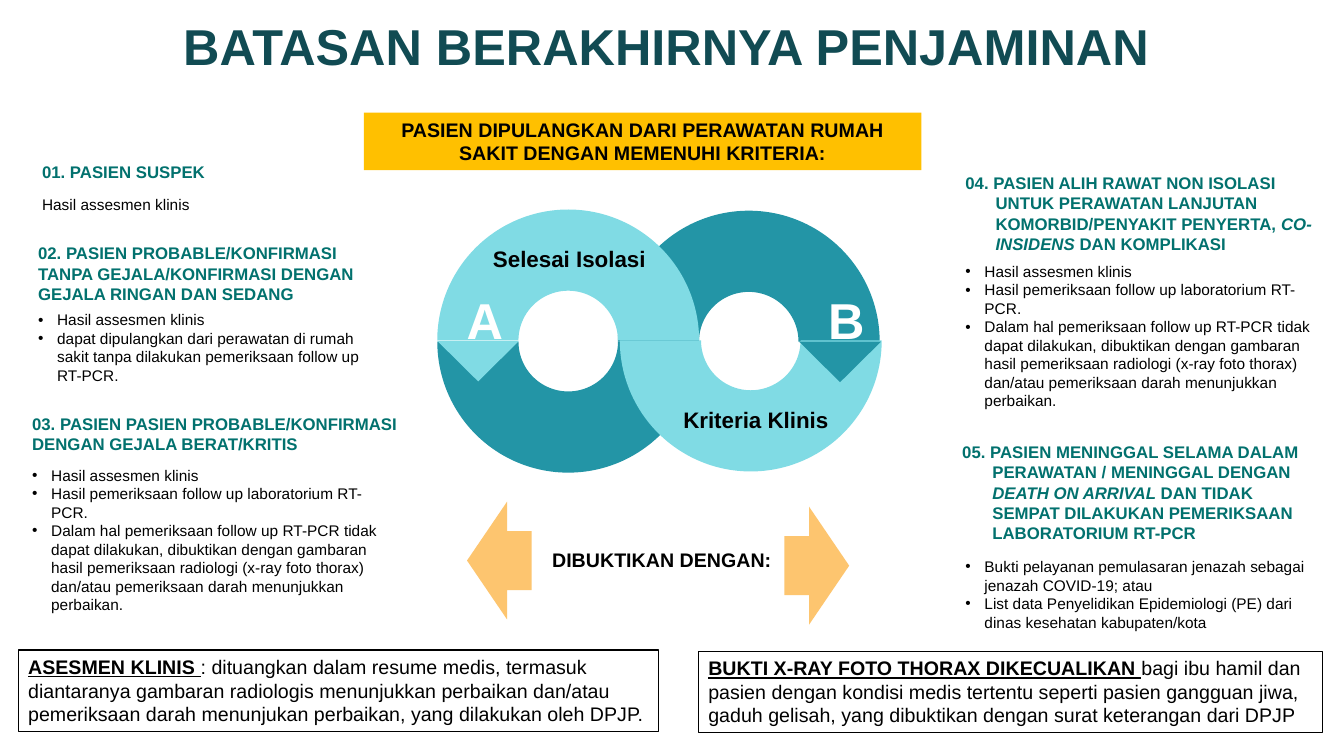
from dataclasses import dataclass
from typing import Optional

import lxml.etree
import pptx
import pptx.dml.color
import pptx.enum.shapes
import pptx.enum.text
import pptx.oxml.ns
import pptx.util

Cm = pptx.util.Cm
Pt = pptx.util.Pt
RGBColor = pptx.dml.color.RGBColor
Kind = pptx.enum.shapes.MSO_SHAPE
Align = pptx.enum.text.PP_ALIGN
Anchor = pptx.enum.text.MSO_ANCHOR
qn = pptx.oxml.ns.qn

NAVY = RGBColor(0x11, 0x4B, 0x53)
GREEN = RGBColor(0x02, 0x71, 0x6E)
TEAL = RGBColor(0x23, 0x95, 0xA6)
AQUA = RGBColor(0x80, 0xDB, 0xE4)
AMBER = RGBColor(0xFF, 0xC0, 0x00)
PEACH = RGBColor(0xFD, 0xC5, 0x6F)
BLACK = RGBColor(0, 0, 0)
WHITE = RGBColor(0xFF, 0xFF, 0xFF)

FONT = "Arial"
HANG = 0.76
DOT = 0.48


@dataclass
class Style:
    size: int
    color: RGBColor = BLACK
    bold: bool = False
    center: bool = False
    middle: bool = False
    bullet: bool = False
    line: bool = False  # marked words are bold and underlined, else italic
    space: Optional[float] = None


@dataclass
class Note:
    """Text in a box; words between asterisks are marked."""
    at: tuple[float, float, float, float]
    style: Style
    lines: tuple[str, ...]
    hang: float = 0
    fill: Optional[RGBColor] = None
    edge: Optional[RGBColor] = None


@dataclass
class Form:
    kind: Kind
    at: tuple[float, float, float, float]
    fill: RGBColor
    turn: int = 0
    adjust: tuple[float, ...] = ()


TITLE = Style(36, NAVY, bold=True, center=True, middle=True, space=0.9)
HEAD = Style(12, GREEN, bold=True, middle=True)
PLAIN = Style(11)
LIST = Style(11, bullet=True)
LETTER = Style(36, WHITE, bold=True, center=True, middle=True)
LABEL = Style(16, bold=True, center=True)
BANNER = Style(14, bold=True, center=True)
FRAME = Style(14, line=True)

ARC = (108, 0, 0.31)
ARROW = (0.5, 0.62)
SIDE = 6.6

RINGS = [
    Form(Kind.BLOCK_ARC, (15.57, 5.31, SIDE, SIDE), TEAL, 0, ARC),
    Form(Kind.BLOCK_ARC, (11.02, 5.31, SIDE, SIDE), TEAL, 180, ARC),
    Form(Kind.BLOCK_ARC, (15.62, 5.28, SIDE, SIDE), AQUA, 180, ARC),
    Form(Kind.BLOCK_ARC, (11.02, 5.28, SIDE, SIDE), AQUA, 0, ARC),
    Form(Kind.ISOSCELES_TRIANGLE, (11.02, 8.59, 2.06, 1.02), AQUA, 180),
    Form(Kind.ISOSCELES_TRIANGLE, (20.14, 8.61, 2.06, 1.02), TEAL, 180),
]
ARROWS = [
    Form(Kind.UP_ARROW, (11.1, 13.31, 2.97, 1.63), PEACH, 270, ARROW),
    Form(Kind.UP_ARROW, (19.1, 13.44, 2.97, 1.63), PEACH, 90, ARROW),
]

CHECKS = (
    "Hasil assesmen klinis",
    "Hasil pemeriksaan follow up laboratorium RT-PCR.",
    "Dalam hal pemeriksaan follow up RT-PCR tidak dapat dilakukan, dibuktikan "
    "dengan gambaran hasil pemeriksaan radiologi (x-ray foto thorax) dan/atau "
    "pemeriksaan darah menunjukkan perbaikan.",
)

NOTES = [
    Note((0.71, 0.23, 32.16, 2.01), TITLE, ("BATASAN BERAKHIRNYA PENJAMINAN",)),
    Note((9.17, 2.84, 14.05, 1.45), BANNER,
         ("PASIEN DIPULANGKAN DARI PERAWATAN RUMAH SAKIT DENGAN MEMENUHI KRITERIA:",),
         fill=AMBER),
    Note((0.81, 3.96, 9.53, 0.76), HEAD, ("01. PASIEN SUSPEK",), HANG),
    Note((0.81, 4.78, 9.53, 0.74), PLAIN, CHECKS[:1]),
    Note((0.71, 5.99, 9.53, 1.8), HEAD,
         ("02. PASIEN PROBABLE/KONFIRMASI TANPA GEJALA/KONFIRMASI DENGAN "
          "GEJALA RINGAN DAN SEDANG",)),
    Note((0.71, 7.7, 9.04, 2.13), LIST,
         (CHECKS[0], "dapat dipulangkan dari perawatan di rumah sakit tanpa "
          "dilakukan pemeriksaan follow up RT-PCR."), DOT),
    Note((0.56, 10.29, 10.59, 1.27), HEAD,
         ("03. PASIEN PASIEN PROBABLE/KONFIRMASI DENGAN GEJALA BERAT/KRITIS",)),
    Note((0.56, 11.61, 9.27, 4.01), LIST, CHECKS, DOT),
    Note((24.08, 4.22, 9.53, 2.31), HEAD,
         ("04. PASIEN ALIH RAWAT NON ISOLASI UNTUK PERAWATAN LANJUTAN "
          "KOMORBID/PENYAKIT PENYERTA, *CO-INSIDENS* DAN KOMPLIKASI",), HANG),
    Note((24.08, 6.48, 9.53, 4.01), LIST, CHECKS, DOT),
    Note((24, 11, 9.53, 2.82), HEAD,
         ("05. PASIEN MENINGGAL SELAMA DALAM PERAWATAN / MENINGGAL DENGAN "
          "*DEATH ON ARRIVAL *DAN TIDAK SEMPAT DILAKUKAN PEMERIKSAAN "
          "LABORATORIUM RT-PCR",), HANG),
    Note((24.08, 13.92, 9.53, 2.13), LIST,
         ("Bukti pelayanan pemulasaran jenazah sebagai jenazah COVID-19; atau",
          "List data Penyelidikan Epidemiologi (PE) dari dinas kesehatan "
          "kabupaten/kota"), DOT),
    Note((11.96, 6.05, 4.78, 0.94), LABEL, ("Selesai Isolasi",)),
    Note((16.66, 10.11, 4.78, 0.94), LABEL, ("Kriteria Klinis",)),
    Note((11.51, 7.14, 1.04, 1.8), LETTER, ("A",)),
    Note((20.62, 7.14, 1.04, 1.8), LETTER, ("B",)),
    Note((13.39, 13.67, 6.58, 0.86), BANNER, ("DIBUKTIKAN DENGAN:",),
         fill=WHITE, edge=WHITE),
    Note((0.46, 16.38, 16.13, 2.06), FRAME,
         ("*ASESMEN KLINIS *: dituangkan dalam resume medis, termasuk diantaranya "
          "gambaran radiologis menunjukkan perbaikan dan/atau pemeriksaan darah "
          "menunjukan perbaikan, yang dilakukan oleh DPJP.",), edge=BLACK),
    Note((17.6, 16.41, 15.72, 2.06), FRAME,
         ("*BUKTI X-RAY FOTO THORAX DIKECUALIKAN *bagi ibu hamil dan pasien dengan "
          "kondisi medis tertentu seperti pasien gangguan jiwa, gaduh gelisah, "
          "yang dibuktikan dengan surat keterangan dari DPJP",), edge=BLACK),
]


def paint(shape, fill: Optional[RGBColor], edge: Optional[RGBColor]) -> None:
    shape.shadow.inherit = False
    if fill is None:
        shape.fill.background()
    else:
        shape.fill.solid()
        shape.fill.fore_color.rgb = fill
    if edge is None:
        shape.line.fill.background()
    else:
        shape.line.color.rgb = edge
        shape.line.width = Pt(0.75)


def draw_form(slide, form: Form) -> None:
    shape = slide.shapes.add_shape(form.kind, *map(Cm, form.at))
    shape.rotation = form.turn
    for i, value in enumerate(form.adjust):
        shape.adjustments[i] = value
    paint(shape, form.fill, None)


def write(para, text: str, note: Note) -> None:
    style = note.style
    para.alignment = Align.CENTER if style.center else Align.LEFT
    para.line_spacing = style.space
    props = para._p.get_or_add_pPr()
    if note.hang:
        props.set("marL", str(Cm(note.hang)))
        props.set("indent", str(-Cm(note.hang)))
    if style.bullet:
        lxml.etree.SubElement(props, qn("a:buFont")).set("typeface", FONT)
        lxml.etree.SubElement(props, qn("a:buChar")).set("char", "•")
    for i, part in enumerate(text.split("*")):
        if not part:
            continue
        run = para.add_run()
        run.text = part
        mark = i % 2 == 1
        font = run.font
        font.name, font.size = FONT, Pt(style.size)
        font.color.rgb = style.color
        font.bold = style.bold or (mark and style.line)
        font.underline = mark and style.line
        font.italic = mark and not style.line


def draw_note(slide, note: Note) -> None:
    at = map(Cm, note.at)
    if note.fill or note.edge:
        shape = slide.shapes.add_shape(Kind.RECTANGLE, *at)
        paint(shape, note.fill, note.edge)
    else:
        shape = slide.shapes.add_textbox(*at)
    frame = shape.text_frame
    frame.word_wrap = True
    frame.vertical_anchor = Anchor.MIDDLE if note.style.middle else Anchor.TOP
    for i, text in enumerate(note.lines):
        write(frame.add_paragraph() if i else frame.paragraphs[0], text, note)


def main() -> None:
    deck = pptx.Presentation()
    deck.slide_width, deck.slide_height = Cm(33.87), Cm(19.05)
    slide = deck.slides.add_slide(deck.slide_layouts[6])
    for form in RINGS:
        draw_form(slide, form)
    for note in NOTES:
        draw_note(slide, note)
    for form in ARROWS:
        draw_form(slide, form)
    deck.save("out.pptx")


if __name__ == "__main__":
    main()
